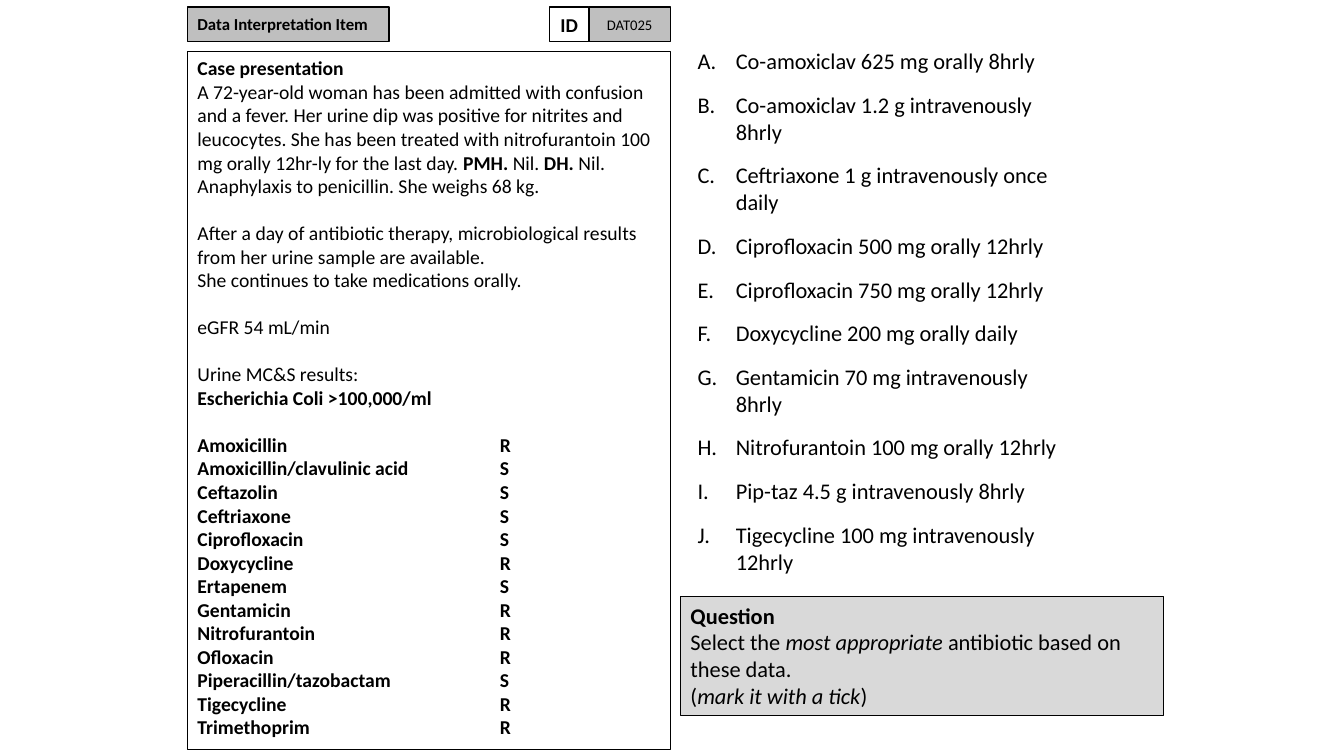
"""Build a data interpretation exam slide with a case, answer options and a question."""
from dataclasses import dataclass
from typing import Optional

from lxml.etree import SubElement
from pptx import Presentation
from pptx.dml.color import RGBColor
from pptx.enum.shapes import MSO_SHAPE
from pptx.enum.text import MSO_ANCHOR, PP_ALIGN
from pptx.oxml.ns import qn
from pptx.slide import Slide
from pptx.text.text import TextFrame, _Paragraph
from pptx.util import Inches, Pt

FONT = "Calibri"
BLACK = "000000"
CASE_GAP = 16.8
OPTION_GAP = 12
OPTION_INDENT = 0.38
RESULT_TAB = 3


@dataclass(frozen=True)
class Span:
    text: str
    bold: bool = False
    italic: bool = False


@dataclass(frozen=True)
class Line:
    spans: tuple[Span, ...]
    gap_before: float = 0
    tab_stop: Optional[float] = None


@dataclass(frozen=True)
class Box:
    left: float
    top: float
    width: float
    height: float
    lines: tuple[Line, ...]
    size: float
    fill: Optional[str] = None
    border: float = 1
    align: PP_ALIGN = PP_ALIGN.LEFT
    anchor: MSO_ANCHOR = MSO_ANCHOR.MIDDLE


def color(value: str) -> RGBColor:
    return RGBColor.from_string(value)


def plain(text: str, gap_before: float = 0) -> Line:
    return Line((Span(text),), gap_before)


def strong(text: str, gap_before: float = 0, tab_stop: Optional[float] = None) -> Line:
    return Line((Span(text, bold=True),), gap_before, tab_stop)


def add_tab_stop(paragraph: _Paragraph, position: float) -> None:
    tabs = SubElement(paragraph._p.get_or_add_pPr(), qn("a:tabLst"))
    SubElement(tabs, qn("a:tab"), pos=str(Inches(position)), algn="l")


def add_letter(paragraph: _Paragraph) -> None:
    properties = paragraph._p.get_or_add_pPr()
    properties.set("marL", str(Inches(OPTION_INDENT)))
    properties.set("indent", str(-Inches(OPTION_INDENT)))
    SubElement(properties, qn("a:buFont"), typeface="+mj-lt")
    SubElement(properties, qn("a:buAutoNum"), type="alphaUcPeriod")


def write_lines(frame: TextFrame, lines: tuple[Line, ...], size: float,
                align: PP_ALIGN = PP_ALIGN.LEFT) -> None:
    frame.word_wrap = True
    frame.text = "\n".join("" for _ in lines)
    for paragraph, line in zip(frame.paragraphs, lines):
        paragraph.alignment = align
        paragraph.space_before = Pt(line.gap_before)
        if line.tab_stop is not None:
            add_tab_stop(paragraph, line.tab_stop)
        for span in line.spans:
            run = paragraph.add_run()
            run.text = span.text
            run.font.name = FONT
            run.font.size = Pt(size)
            run.font.bold = span.bold
            run.font.italic = span.italic
            run.font.color.rgb = color(BLACK)


def draw_box(slide: Slide, box: Box) -> None:
    shape = slide.shapes.add_shape(
        MSO_SHAPE.RECTANGLE, Inches(box.left), Inches(box.top),
        Inches(box.width), Inches(box.height))
    shape.shadow.inherit = False
    if box.fill:
        shape.fill.solid()
        shape.fill.fore_color.rgb = color(box.fill)
    else:
        shape.fill.background()
    shape.line.color.rgb = color(BLACK)
    shape.line.width = Pt(box.border)
    shape.text_frame.vertical_anchor = box.anchor
    write_lines(shape.text_frame, box.lines, box.size, box.align)


def draw_options(slide: Slide, options: tuple[str, ...]) -> None:
    shape = slide.shapes.add_textbox(
        Inches(6.82), Inches(0.42), Inches(3.86), Inches(6.28))
    lines = tuple(plain(option, OPTION_GAP) for option in options)
    write_lines(shape.text_frame, lines, 16)
    for paragraph in shape.text_frame.paragraphs:
        add_letter(paragraph)


OPTIONS = (
    "Co-amoxiclav 625 mg orally 8hrly",
    "Co-amoxiclav 1.2 g intravenously 8hrly",
    "Ceftriaxone 1 g intravenously once daily",
    "Ciprofloxacin 500 mg orally 12hrly",
    "Ciprofloxacin 750 mg orally 12hrly",
    "Doxycycline 200 mg orally daily",
    "Gentamicin 70 mg intravenously 8hrly",
    "Nitrofurantoin 100 mg orally 12hrly",
    "Pip-taz 4.5 g intravenously 8hrly",
    "Tigecycline 100 mg intravenously 12hrly",
)

SENSITIVITIES = {
    "Amoxicillin": "R",
    "Amoxicillin/clavulinic acid": "S",
    "Ceftazolin": "S",
    "Ceftriaxone": "S",
    "Ciprofloxacin": "S",
    "Doxycycline": "R",
    "Ertapenem": "S",
    "Gentamicin": "R",
    "Nitrofurantoin": "R",
    "Ofloxacin": "R",
    "Piperacillin/tazobactam": "S",
    "Tigecycline": "R",
    "Trimethoprim": "R",
}

CASE = (
    strong("Case presentation"),
    Line((
        Span("A 72-year-old woman has been admitted with confusion and a fever. "
             "Her urine dip was positive for nitrites and leucocytes. She has been "
             "treated with nitrofurantoin 100 mg orally 12hr-ly for the last day. "),
        Span("PMH. ", bold=True), Span("Nil. "), Span("DH.", bold=True),
        Span(" Nil. Anaphylaxis to penicillin. She weighs 68 kg."))),
    plain("After a day of antibiotic therapy, microbiological results from her "
          "urine sample are available.", CASE_GAP),
    plain("She continues to take medications orally."),
    plain("eGFR 54 mL/min", CASE_GAP),
    plain("Urine MC&S results:", CASE_GAP),
    strong("Escherichia Coli >100,000/ml"),
) + tuple(
    strong(f"{drug}\t{result}", 0 if index else CASE_GAP, RESULT_TAB)
    for index, (drug, result) in enumerate(SENSITIVITIES.items()))

QUESTION = (
    strong("Question"),
    Line((Span("Select the "), Span("most appropriate ", italic=True),
          Span("antibiotic based on these data."))),
    Line((Span("("), Span("mark it with a tick", italic=True), Span(")"))),
)

BOXES = (
    Box(1.86, 0.07, 2, 0.34, (strong("Data Interpretation Item"),), 12, "BFBFBF"),
    Box(5.84, 0.07, 0.81, 0.34, (plain("DAT025"),), 10.5, "BFBFBF",
        align=PP_ALIGN.CENTER),
    Box(5.45, 0.07, 0.39, 0.34, (strong("ID"),), 14, align=PP_ALIGN.CENTER),
    Box(1.86, 0.51, 4.79, 6.93, CASE, 14, border=0.75, anchor=MSO_ANCHOR.TOP),
    Box(6.75, 5.92, 4.79, 1.18, QUESTION, 16, "D9D9D9", 0.75,
        anchor=MSO_ANCHOR.TOP),
)


def main() -> None:
    presentation = Presentation()
    presentation.slide_width = Inches(13.33)
    presentation.slide_height = Inches(7.5)
    slide = presentation.slides.add_slide(presentation.slide_layouts[6])
    draw_options(slide, OPTIONS)
    for box in BOXES:
        draw_box(slide, box)
    presentation.save("out.pptx")


if __name__ == "__main__":
    main()
